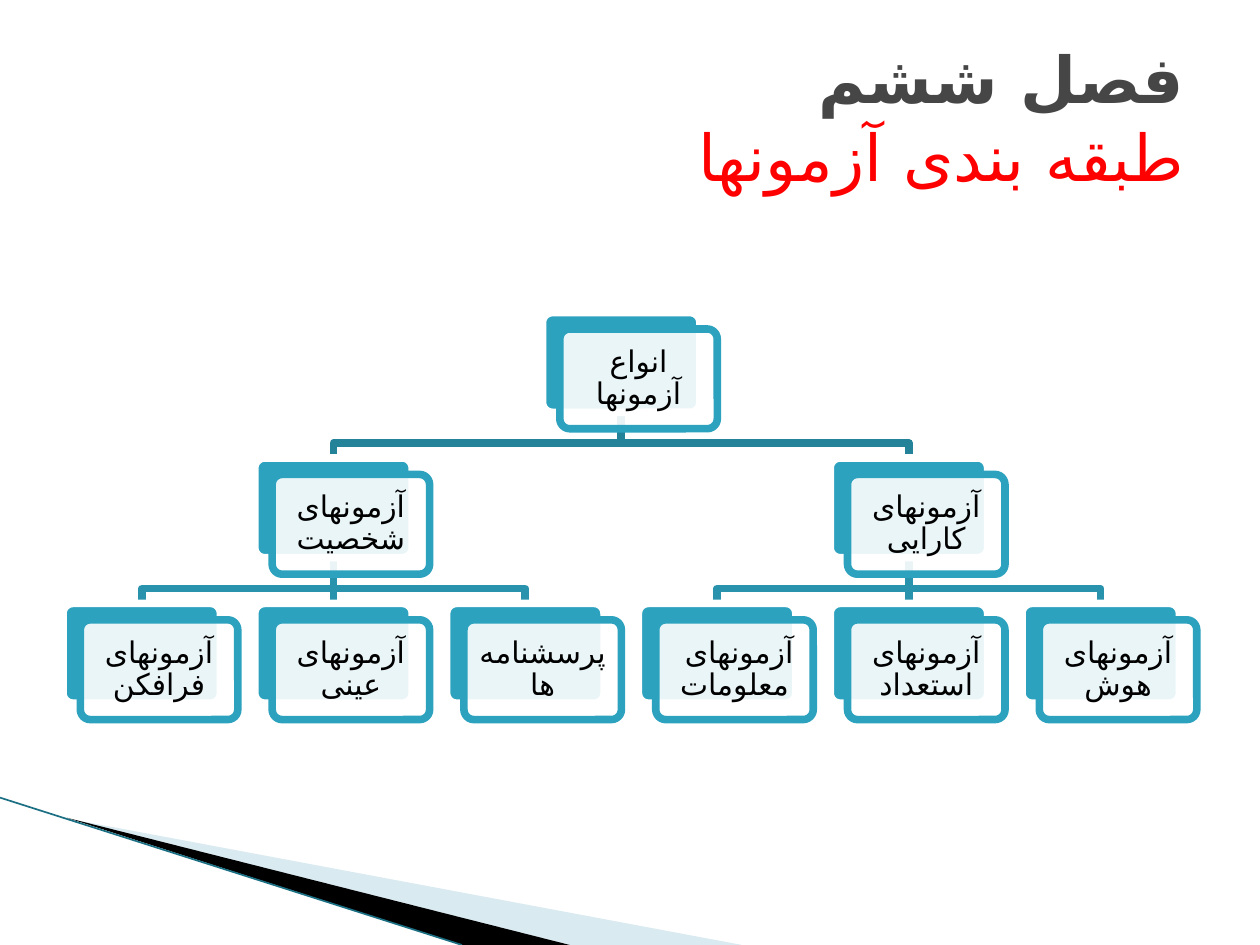
import dataclasses

import lxml.etree
import pptx
import pptx.dml.color
import pptx.enum.shapes
import pptx.enum.text
import pptx.oxml.ns
import pptx.util

Pt = pptx.util.Pt
qn = pptx.oxml.ns.qn


@dataclasses.dataclass(frozen=True)
class Theme:
    font: str = "Karla"
    script: str = "DejaVu Sans"
    head: float = 36.9
    label: float = 17
    thick: float = 4.33
    thin: float = 0.95
    teal: str = "2DA2BF"
    upper: str = "248299"
    lower: str = "2993AD"
    pale: str = "A0CBDC"
    edge: str = "1B6F83"
    gray: str = "464646"
    red: str = "FF0000"
    white: str = "FFFFFF"
    black: str = "000000"


LOOK = Theme()

# Tree grid, in points
LEFT, TOP = 36, 178.6
STEP, DROP = 109.6, 83.1
WIDE, HIGH = 90, 57
SHIFT, SINK = 9.9, 9.4
BEND = 17.6

# Label, column, row, index of the parent
NODES = [
    ("انواع آزمونها", 2.5, 0, None),
    ("آزمونهای شخصیت", 1, 1, 0),
    ("آزمونهای فرافکن", 0, 2, 1),
    ("آزمونهای عینی", 1, 2, 1),
    ("پرسشنامه ها", 2, 2, 1),
    ("آزمونهای کارایی", 4, 1, 0),
    (" آزمونهای معلومات", 3, 2, 5),
    ("آزمونهای استعداد", 4, 2, 5),
    ("آزمونهای هوش", 5, 2, 5),
]


def rgb(code):
    return pptx.dml.color.RGBColor.from_string(code)


def paint(shape, color, alpha=100):
    shape.shadow.inherit = False
    shape.fill.solid()
    shape.fill.fore_color.rgb = rgb(color)
    if alpha < 100:
        tint = shape.fill._xPr.find(".//" + qn("a:srgbClr"))
        lxml.etree.SubElement(tint, qn("a:alpha"), val=str(alpha * 1000))


def stroke(shape, color, width):
    shape.line.color.rgb = rgb(color)
    shape.line.width = Pt(width)


def add_run(para, text, size, color, bold=False):
    run = para.add_run()
    run.text = text
    font = run.font
    font.name, font.size, font.bold = LOOK.font, Pt(size), bold
    font.color.rgb = rgb(color)
    lxml.etree.SubElement(run._r.rPr, qn("a:cs"), typeface=LOOK.script)


def add_path(slide, points, close):
    spots = [(Pt(x), Pt(y)) for x, y in points]
    path = slide.shapes.build_freeform(*spots[0])
    path.add_line_segments(spots[1:], close=close)
    return path.convert_to_shape()


def add_wedge(slide, points, color, alpha=100):
    wedge = add_path(slide, points, True)
    paint(wedge, color, alpha)
    wedge.line.fill.background()


def add_line(slide, start, end, color, width):
    line = slide.shapes.add_connector(
        pptx.enum.shapes.MSO_CONNECTOR.STRAIGHT, *map(Pt, start + end))
    stroke(line, color, width)
    lxml.etree.SubElement(line._element.spPr, qn("a:effectLst"))
    return line


def add_elbow(slide, start, end, color):
    (x, y), (far, low) = start, end
    elbow = add_path(slide, [start, (x, y + BEND), (far, y + BEND), end], False)
    elbow.shadow.inherit = False
    elbow.fill.background()
    stroke(elbow, color, LOOK.thick)


def place(col, row):
    return LEFT + col * STEP, TOP + row * DROP


def add_card(slide, x, y, fill, alpha, edge):
    card = slide.shapes.add_shape(
        pptx.enum.shapes.MSO_SHAPE.ROUNDED_RECTANGLE,
        Pt(x), Pt(y), Pt(WIDE), Pt(HIGH))
    card.adjustments[0] = 0.1
    paint(card, fill, alpha)
    stroke(card, edge, LOOK.thick)
    return card


def add_node(slide, label, col, row):
    x, y = place(col, row)
    back = add_card(slide, x, y, LOOK.teal, 100, LOOK.white)
    front = add_card(slide, x + SHIFT, y + SINK, LOOK.white, 90, LOOK.teal)
    frame = front.text_frame
    frame.word_wrap = True
    frame.vertical_anchor = pptx.enum.text.MSO_ANCHOR.MIDDLE
    frame.margin_left = frame.margin_right = Pt(3.4)
    frame.margin_top = frame.margin_bottom = Pt(3.4)
    para = frame.paragraphs[0]
    para.alignment = pptx.enum.text.PP_ALIGN.CENTER
    para.line_spacing = 0.9
    add_run(para, label, LOOK.label, LOOK.black)
    return back


def add_tree(slide):
    # Links lie behind the cards
    joins = []
    for kid, (_, col, row, top) in enumerate(NODES):
        if top is None:
            continue
        x, y = place(NODES[top][1], row - 1)
        far, low = place(col, row)
        start, end = (x + WIDE / 2, y + HIGH), (far + WIDE / 2, low)
        color = LOOK.upper if row == 1 else LOOK.lower
        if x == far:
            joins.append((add_line(slide, start, end, color, LOOK.thick), top, kid))
        else:
            add_elbow(slide, start, end, color)

    # Cards
    cards = [add_node(slide, *node[:3]) for node in NODES]
    for line, top, kid in joins:
        line.begin_connect(cards[top], 2)
        line.end_connect(cards[kid], 0)


def add_title(slide):
    box = slide.shapes.add_textbox(Pt(36), Pt(21.6), Pt(648), Pt(90))
    frame = box.text_frame
    frame.word_wrap = True
    frame.vertical_anchor = pptx.enum.text.MSO_ANCHOR.MIDDLE
    para = frame.paragraphs[0]
    para.alignment = pptx.enum.text.PP_ALIGN.RIGHT
    para._p.get_or_add_pPr().set("rtl", "1")
    add_run(para, "فصل ششم", LOOK.head, LOOK.gray, True)
    para.add_line_break()
    add_run(para, "طبقه بندی آزمونها", LOOK.head, LOOK.red)


def main():
    deck = pptx.Presentation()
    deck.slide_width, deck.slide_height = Pt(720), Pt(540)
    slide = deck.slides.add_slide(deck.slide_layouts[6])

    # Corner sweep
    add_wedge(slide, [(39.6, 468), (424, 540), (325.5, 540)], LOOK.pale, 40)
    add_wedge(slide, [(38.2, 467.3), (325.7, 540), (264, 540)], LOOK.black)
    add_line(slide, (0, 455.8), (264, 540), LOOK.edge, LOOK.thin)

    add_tree(slide)
    add_title(slide)
    deck.save("out.pptx")


if __name__ == "__main__":
    main()
